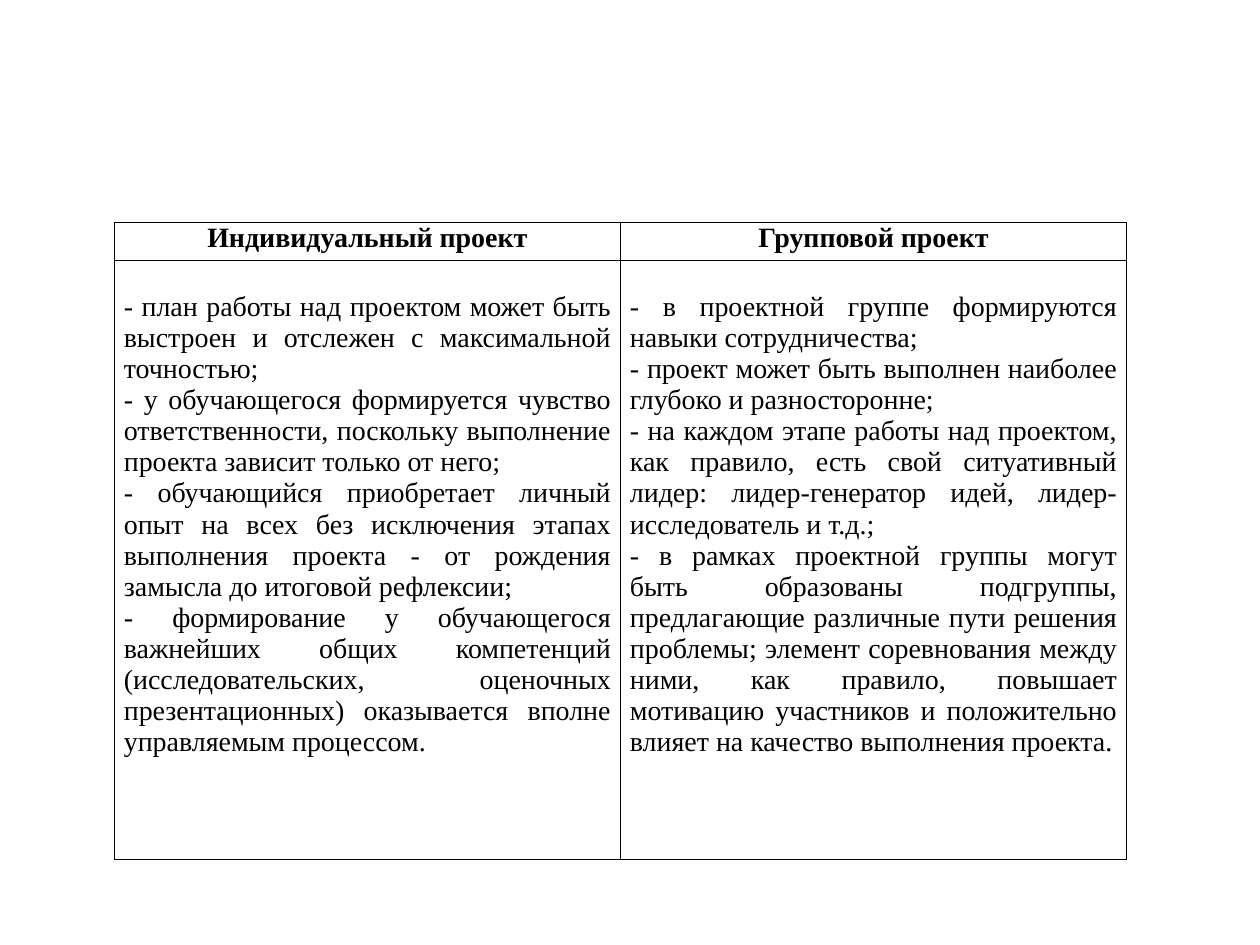
from lxml import etree
from pptx import Presentation
from pptx import util as u
from pptx.dml import color
from pptx.enum import text
from pptx.oxml import ns

HEADINGS = ["Индивидуальный проект", "Групповой проект"]
ADVANTAGES = [
    [
        "- план работы над проектом может быть выстроен и отслежен с максимальной точностью;",
        "- у обучающегося формируется чувство ответственности, поскольку выполнение проекта зависит только от него;",
        "- обучающийся приобретает личный опыт на всех без исключения этапах выполнения проекта - от рождения замысла до итоговой рефлексии;",
        "- формирование у обучающегося важнейших общих компетенций (исследовательских, оценочных презентационных) оказывается вполне управляемым процессом.",
    ],
    [
        "- в проектной группе формируются навыки сотрудничества;",
        "- проект может быть выполнен наиболее глубоко и разносторонне;",
        "- на каждом этапе работы над проектом, как правило, есть свой ситуативный лидер: лидер-генератор идей, лидер-исследователь и т.д.;",
        "- в рамках проектной группы могут быть образованы подгруппы, предлагающие различные пути решения проблемы; элемент соревнования между ними, как правило, повышает мотивацию участников и положительно влияет на качество выполнения проекта.",
    ],
]


def rgb(value):
    return color.RGBColor.from_string(value)


class ComparisonSlide:
    """Holds the style and the current slide, and draws tables on it."""

    font_name = "Times New Roman"
    font_size = u.Pt(16)
    ink = "000000"
    border_width = u.Pt(1)
    side_margin = u.Pt(5.4)

    def __init__(self, slide):
        self.slide = slide

    def table(self, left, top, column_widths, row_heights):
        frame = self.slide.shapes.add_table(
            len(row_heights), len(column_widths), u.Pt(left), u.Pt(top),
            u.Pt(sum(column_widths)), u.Pt(sum(row_heights)))
        table = frame.table
        table.first_row = table.horz_banding = False
        for column, width in zip(table.columns, column_widths):
            column.width = u.Pt(width)
        for row, height in zip(table.rows, row_heights):
            row.height = u.Pt(height)
        return table

    def borders(self, cell):
        properties = cell._tc.get_or_add_tcPr()
        for side in ("lnL", "lnR", "lnT", "lnB"):
            line = etree.SubElement(properties, ns.qn(f"a:{side}"), w=str(self.border_width))
            fill = etree.SubElement(line, ns.qn("a:solidFill"))
            etree.SubElement(fill, ns.qn("a:srgbClr"), val=self.ink)

    def cell(self, cell, lines, alignment, bold=False, top_margin=0):
        self.borders(cell)
        cell.fill.background()
        cell.margin_left = cell.margin_right = self.side_margin
        cell.margin_top, cell.margin_bottom = u.Pt(top_margin), 0
        cell.text_frame.text = "\n".join(lines)
        for paragraph in cell.text_frame.paragraphs:
            paragraph.alignment = alignment
            for run in paragraph.runs:
                run.font.name = self.font_name
                run.font.size = self.font_size
                run.font.bold = bold
                run.font.color.rgb = rgb(self.ink)


def main():
    presentation = Presentation()
    presentation.slide_width, presentation.slide_height = u.Pt(720), u.Pt(540)
    slide = presentation.slides.add_slide(presentation.slide_layouts[6])
    comparison = ComparisonSlide(slide)
    table = comparison.table(65.4, 127.2, [289.2, 289.2], [21.6, 342.5])
    for index, (heading, advantages) in enumerate(zip(HEADINGS, ADVANTAGES)):
        comparison.cell(table.cell(0, index), [heading], text.PP_ALIGN.CENTER, bold=True)
        comparison.cell(table.cell(1, index), advantages, text.PP_ALIGN.JUSTIFY, top_margin=17.7)
    presentation.save("out.pptx")


if __name__ == "__main__":
    main()
